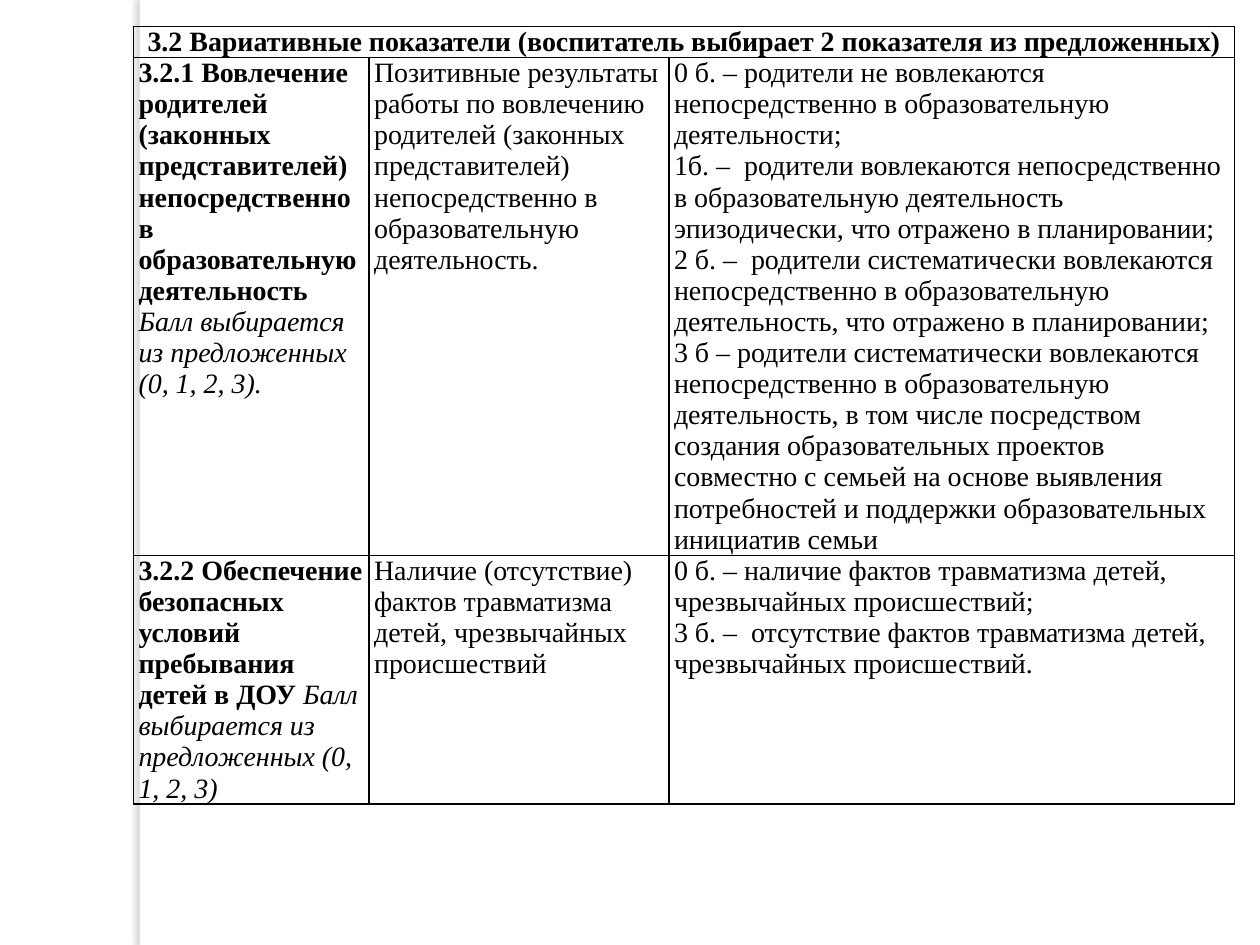
from lxml import etree
from pptx import Presentation
from pptx.dml.color import RGBColor
from pptx.enum.shapes import MSO_SHAPE
from pptx.enum.text import PP_ALIGN
from pptx.oxml import parse_xml
from pptx.oxml.ns import nsdecls, qn
from pptx.util import Pt

RECTANGLE = MSO_SHAPE.RECTANGLE
CENTER = PP_ALIGN.CENTER
FONT = "Times New Roman"
BLACK, WHITE, SHADOW = "000000", "FFFFFF", "736F63"

STRIP_BOX = (80, 0, 5.6, 540)
TABLE_BOX = (76.3, 15.1, 629.3, 499)
COLUMN_WIDTHS = (134.64, 171.36, 323.28)
ROW_HEIGHTS = (13.7, 123.8, 82.8)
MARGINS = {"margin_left": 2.88, "margin_right": 2.88, "margin_top": 0, "margin_bottom": 0}

PLAIN = {"bold": False, "italic": False}
BOLD = {"bold": True, "italic": False}
ITALIC = {"bold": False, "italic": True}

# Each cell is a list of paragraphs, each paragraph a list of (text, style)
HEADING = [[("3.2 Вариативные показатели (воспитатель выбирает 2 показателя из предложенных)", BOLD)]]
INDICATORS = [
    [
        [
            [("3.2.1 Вовлечение родителей (законных представителей) непосредственно "
              "в образовательную деятельность", BOLD)],
            [("Балл выбирается из предложенных (0, 1, 2, 3).", ITALIC)],
        ],
        [[("Позитивные результаты работы по вовлечению родителей (законных представителей) "
           "непосредственно в образовательную деятельность.", PLAIN)]],
        [
            [("0 б. – родители не вовлекаются непосредственно в образовательную деятельности;", PLAIN)],
            [("1б. –  родители вовлекаются непосредственно в образовательную деятельность "
              "эпизодически, что отражено в планировании;", PLAIN)],
            [("2 б. –  родители систематически вовлекаются непосредственно в образовательную "
              "деятельность, что отражено в планировании;", PLAIN)],
            [("3 б – родители систематически вовлекаются непосредственно в образовательную "
              "деятельность, в том числе посредством создания образовательных проектов совместно "
              "с семьей на основе выявления потребностей и поддержки образовательных инициатив семьи", PLAIN)],
        ],
    ],
    [
        [[("3.2.2 Обеспечение безопасных условий пребывания детей в ДОУ", BOLD),
          (" Балл выбирается из предложенных (0, 1, 2, 3)", ITALIC)]],
        [[("Наличие (отсутствие) фактов травматизма детей, чрезвычайных происшествий", PLAIN)]],
        [
            [("0 б. – наличие фактов травматизма детей, чрезвычайных происшествий;", PLAIN)],
            [("3 б. –  отсутствие фактов травматизма детей, чрезвычайных происшествий.", PLAIN)],
        ],
    ],
]


def color(value):
    return RGBColor.from_string(value)


def add_strip(slide, box):
    """White vertical strip that casts a soft shadow to the left."""
    strip = slide.shapes.add_shape(RECTANGLE, *map(Pt, box))
    strip.fill.solid()
    strip.fill.fore_color.rgb = color(WHITE)
    strip.line.fill.background()
    strip.shadow.inherit = False
    effects = strip._element.spPr.find(qn("a:effectLst"))
    effects.append(parse_xml(
        f'<a:outerShdw {nsdecls("a")} blurRad="{Pt(3)}" dist="{Pt(3)}" dir="10800000">'
        f'<a:srgbClr val="{SHADOW}"><a:alpha val="25000"/></a:srgbClr></a:outerShdw>'))


def set_borders(cell):
    properties = cell._tc.get_or_add_tcPr()
    for side in ("lnL", "lnR", "lnT", "lnB"):
        line = etree.SubElement(properties, qn(f"a:{side}"), w=str(Pt(1)))
        fill = etree.SubElement(line, qn("a:solidFill"))
        etree.SubElement(fill, qn("a:srgbClr"), val=BLACK)


def fill_cell(cell, paragraphs, alignment=None):
    for name, value in MARGINS.items():
        setattr(cell, name, Pt(value))
    frame = cell.text_frame
    for index, runs in enumerate(paragraphs):
        paragraph = frame.add_paragraph() if index else frame.paragraphs[0]
        paragraph.alignment = alignment
        for text, style in runs:
            run = paragraph.add_run()
            run.text = text
            run.font.color.rgb = color(BLACK)
            for name, value in {"name": FONT, "size": Pt(16), **style}.items():
                setattr(run.font, name, value)


def add_indicator_table(slide, box):
    """Heading row across the table, then one row for each indicator."""
    graphic = slide.shapes.add_table(len(ROW_HEIGHTS), len(COLUMN_WIDTHS), *map(Pt, box))
    table = graphic.table
    table.first_row = table.horz_banding = False
    for column, width in zip(table.columns, COLUMN_WIDTHS):
        column.width = Pt(width)
    for row, height in zip(table.rows, ROW_HEIGHTS):
        row.height = Pt(height)
    graphic.height = Pt(box[3])

    for cell in table.iter_cells():
        set_borders(cell)
        cell.fill.background()

    table.cell(0, 0).merge(table.cell(0, len(COLUMN_WIDTHS) - 1))
    fill_cell(table.cell(0, 0), HEADING, CENTER)
    for row_index, contents in enumerate(INDICATORS, start=1):
        for column_index, paragraphs in enumerate(contents):
            fill_cell(table.cell(row_index, column_index), paragraphs)


def main():
    presentation = Presentation()
    presentation.slide_width, presentation.slide_height = Pt(720), Pt(540)
    slide = presentation.slides.add_slide(presentation.slide_layouts[6])
    slide.background.fill.solid()
    slide.background.fill.fore_color.rgb = color(WHITE)
    add_strip(slide, STRIP_BOX)
    add_indicator_table(slide, TABLE_BOX)
    presentation.save("out.pptx")


if __name__ == "__main__":
    main()
